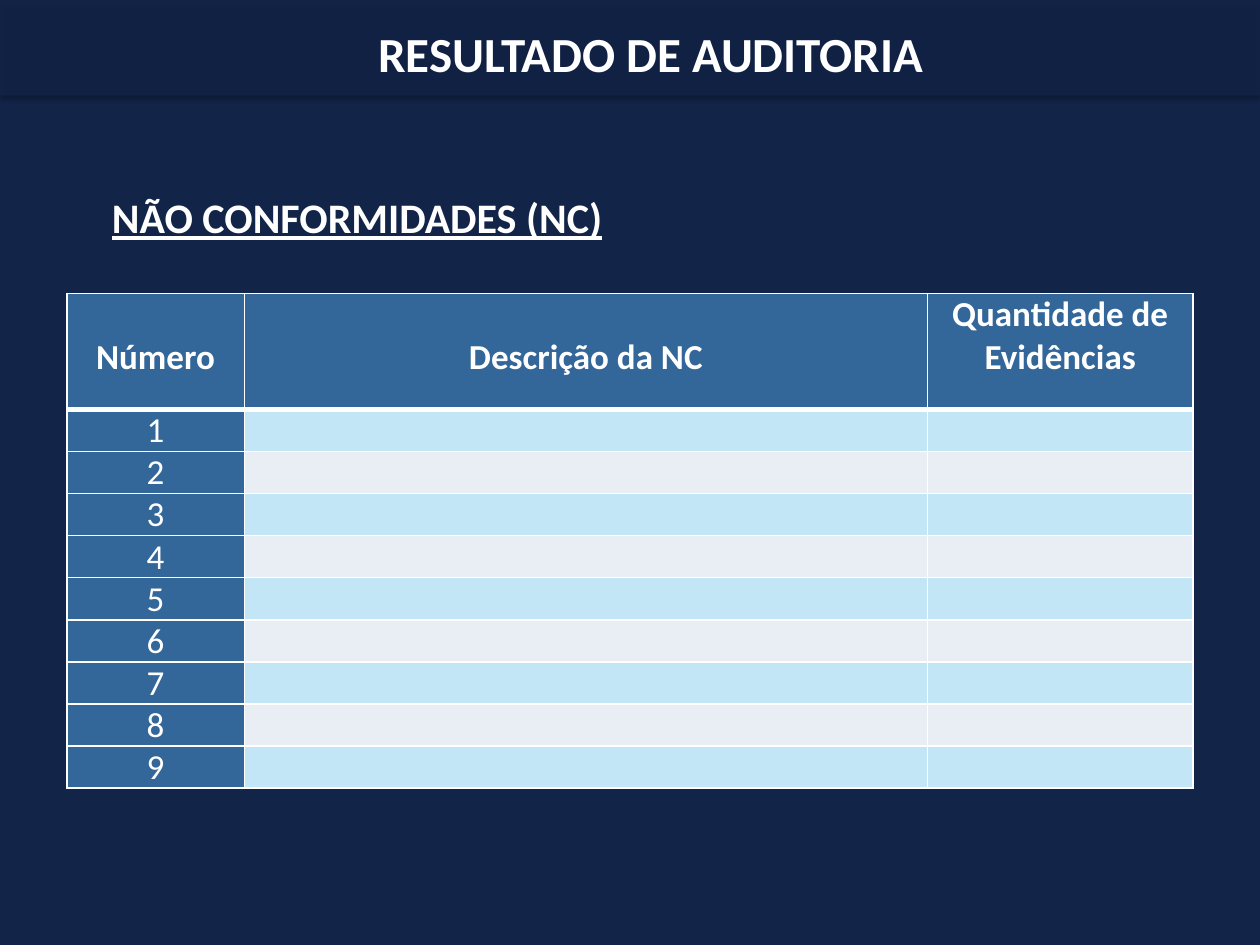
from lxml.etree import SubElement
from pptx import Presentation
from pptx.dml.color import RGBColor
from pptx.enum.shapes import MSO_SHAPE
from pptx.enum.text import PP_ALIGN
from pptx.oxml import parse_xml
from pptx.oxml.ns import nsdecls, qn
from pptx.util import Inches, Pt

# Content
TITLE = "RESULTADO DE AUDITORIA"
HEADING = "NÃO CONFORMIDADES (NC)"
HEADS = ["Número", "Descrição da NC", "Quantidade de Evidências"]
COUNT = 9

# Layout and colours
WIDTHS = [1.41, 5.42, 2.11]
HEAD_H, ROW_H = 0.92, 3 / COUNT
LINE_H = 0.34
NAVY, BLUE, WHITE = "122448", "336699", "FFFFFF"
BANDS = ["C2E6F6", "E9EDF4"]


def color(text):
    return RGBColor.from_string(text)


def style(para, size, bold=False, align=PP_ALIGN.CENTER):
    para.alignment = align
    font = para.font
    font.name, font.size, font.bold = "Calibri", Pt(size), bold
    font.color.rgb = color(WHITE)


def panel(height, alpha, dist):
    box = slide.shapes.add_shape(MSO_SHAPE.RECTANGLE, 0, 0, Inches(10), Inches(height))
    box.fill.solid()
    box.fill.fore_color.rgb = color(NAVY)
    box.line.fill.background()
    tint = box.fill._xPr.find(qn("a:solidFill"))[0]
    SubElement(tint, qn("a:alpha"), val=str(alpha * 1000))
    box.shadow.inherit = False
    glow = box._element.spPr.find(qn("a:effectLst"))
    glow.append(parse_xml(
        f'<a:outerShdw {nsdecls("a")} blurRad="{Pt(3.1)}" dist="{Pt(dist)}" '
        'dir="5400000" rotWithShape="0"><a:srgbClr val="000000">'
        '<a:alpha val="35000"/></a:srgbClr></a:outerShdw>'))


def label(text, left, top, width, size, align):
    box = slide.shapes.add_textbox(*map(Inches, (left, top, width, 0.57)))
    box.text_frame.word_wrap = True
    para = box.text_frame.paragraphs[0]
    para.text = text
    style(para, size, True, align)
    return para


def paint(cell, fill, base):
    cell.fill.solid()
    cell.fill.fore_color.rgb = color(fill)
    cell.margin_left = cell.margin_right = Inches(0.07)
    cell.margin_top = cell.margin_bottom = 0
    props = cell._tc.get_or_add_tcPr()
    sides = [("lnL", 1), ("lnR", 1), ("lnT", 1), ("lnB", base)]
    for spot, (side, width) in enumerate(sides):
        props.insert(spot, parse_xml(
            f'<a:{side} {nsdecls("a")} w="{Pt(width)}"><a:solidFill>'
            f'<a:srgbClr val="{WHITE}"/></a:solidFill></a:{side}>'))


deck = Presentation()
deck.slide_width, deck.slide_height = Inches(10), Inches(7.5)
slide = deck.slides.add_slide(deck.slide_layouts[6])

# Background and title band
panel(7.5, 100, 1.8)
panel(0.76, 80, 1.5)

# Title and heading
label(TITLE, 0.33, 0.14, 9.67, 28, PP_ALIGN.CENTER)
head = label(HEADING, 0.79, 1.47, 8.38, 24, PP_ALIGN.JUSTIFY)
head.font.underline = True
indent = head._p.get_or_add_pPr()
indent.set("marL", str(Inches(0.38)))
indent.set("indent", str(-Inches(0.38)))

# Table
rows = [HEADS] + [[str(n), "", ""] for n in range(1, COUNT + 1)]
table = slide.shapes.add_table(
    len(rows), len(HEADS), Inches(0.53), Inches(2.33),
    Inches(sum(WIDTHS)), Inches(HEAD_H + ROW_H * COUNT)).table
for col, width in zip(table.columns, WIDTHS):
    col.width = Inches(width)
for r, row in enumerate(rows):
    table.rows[r].height = Inches(ROW_H if r else HEAD_H)
    for c, text in enumerate(row):
        cell = table.cell(r, c)
        fill = BANDS[(r - 1) % 2] if r and c else BLUE
        paint(cell, fill, 3 if r == 0 else 1)
        if text:
            cell.text = text
        style(cell.text_frame.paragraphs[0], 20, r == 0)
        # One-line heads sit level with the second line of the last head
        if r == 0 and c < 2:
            cell.margin_top = Inches(LINE_H)
for c in range(len(HEADS)):
    # Same heavy rule seen from the row below
    edge = table.cell(1, c)._tc.tcPr.find(qn("a:lnT"))
    edge.set("w", str(Pt(3)))

deck.save("out.pptx")
